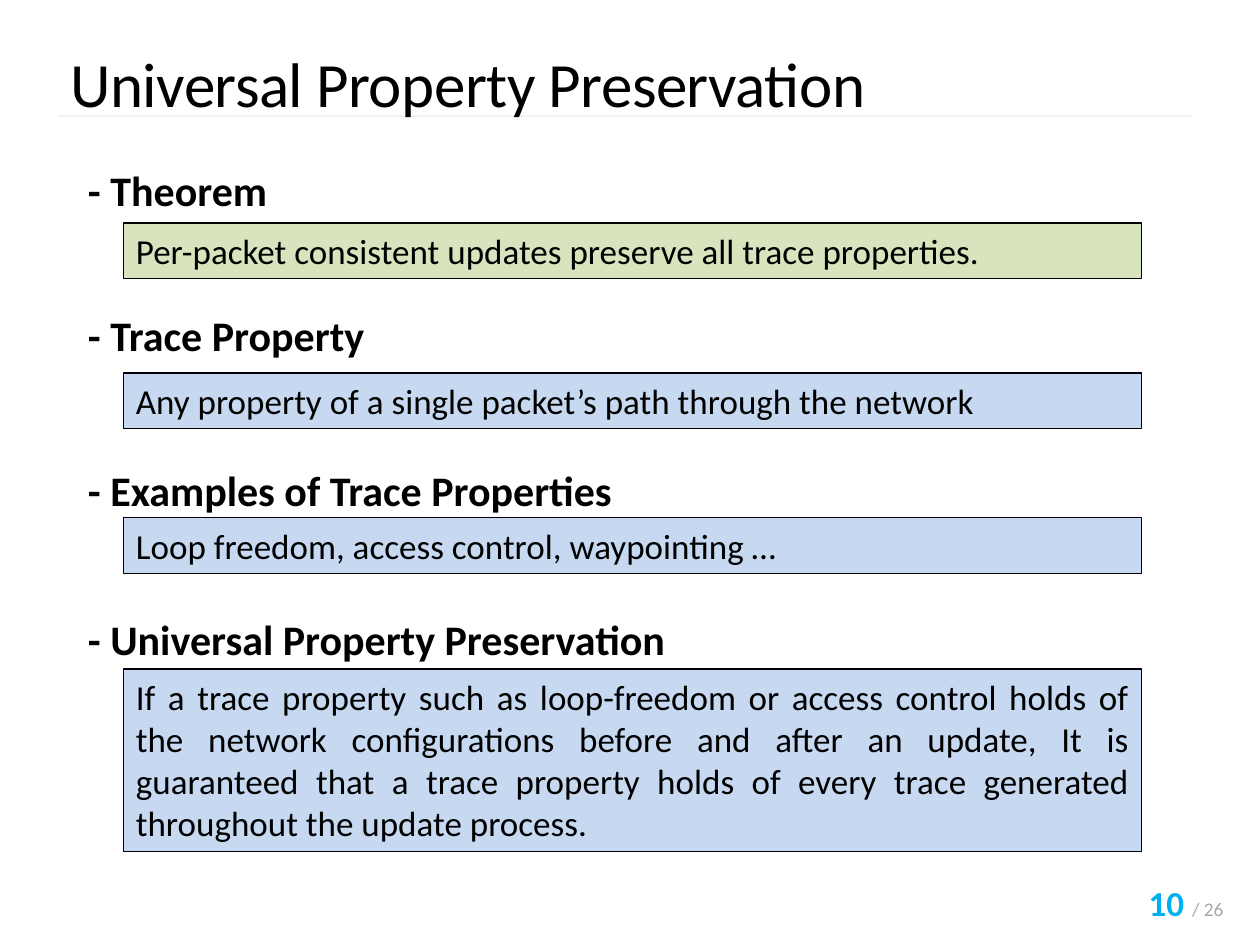
from lxml.etree import SubElement
from pptx import Presentation
from pptx.dml.color import RGBColor
from pptx.enum.shapes import MSO_CONNECTOR, MSO_SHAPE
from pptx.enum.text import MSO_ANCHOR, MSO_AUTO_SIZE, PP_ALIGN
from pptx.oxml.ns import qn
from pptx.util import Inches, Pt

BLACK = RGBColor(0x00, 0x00, 0x00)
GREEN = RGBColor(0xD7, 0xE4, 0xBD)
BLUE = RGBColor(0xC6, 0xD9, 0xF1)
RULE = RGBColor(0xF2, 0xF2, 0xF2)
CYAN = RGBColor(0x00, 0xB0, 0xF0)
GRAY = RGBColor(0xA6, 0xA6, 0xA6)

# Content
TITLE = "Universal Property Preservation"
PAGE, TOTAL = "10 ", "/ 26"
# heading, heading top, statement, box top, box height, fill, alignment
SECTIONS = [
    ("- Theorem", 1.26,
     "Per-packet consistent updates preserve all trace properties.",
     1.77, 0.44, GREEN, PP_ALIGN.LEFT),
    ("- Trace Property", 2.41,
     "Any property of a single packet’s path through the network",
     2.96, 0.44, BLUE, PP_ALIGN.LEFT),
    ("- Examples of Trace Properties", 3.64,
     "Loop freedom, access control, waypointing …",
     4.11, 0.44, BLUE, PP_ALIGN.LEFT),
    ("- Universal Property Preservation", 4.82,
     "If a trace property such as loop-freedom or access control holds of "
     "the network configurations before and after an update, It is "
     "guaranteed that a trace property holds of every trace generated "
     "throughout the update process.",
     5.31, 1.45, BLUE, PP_ALIGN.JUSTIFY),
]

# Text formats
TITLE_FONT = {"size": Pt(36), "bold": False}
HEADING_FONT = {"size": Pt(24), "bold": True}
BODY_FONT = {"size": Pt(20), "bold": False}
PAGE_FONT = {"size": Pt(20), "bold": True}
TOTAL_FONT = {"size": Pt(11), "bold": False}

# Layout
HEADING_X, BOX_X, BOX_W = 0.6, 0.98, 8.08
HEADING_W, HEADING_H = BOX_X + BOX_W - HEADING_X, 0.5


def add_run(p, text, font, color=BLACK):
    r = p.add_run()
    r.text = text
    r.font.name = "Calibri"
    r.font.color.rgb = color
    for name, value in font.items():
        setattr(r.font, name, value)
    return r


def set_frame(sp, align=PP_ALIGN.LEFT, anchor=MSO_ANCHOR.TOP):
    tf = sp.text_frame
    tf.word_wrap = True
    tf.auto_size = MSO_AUTO_SIZE.NONE
    tf.vertical_anchor = anchor
    p = tf.paragraphs[0]
    p.alignment = align
    return p


def add_text(s, x, y, w, h, align=PP_ALIGN.LEFT):
    sp = s.shapes.add_textbox(Inches(x), Inches(y), Inches(w), Inches(h))
    return set_frame(sp, align)


def add_box(s, y, h, fill, align):
    sp = s.shapes.add_shape(MSO_SHAPE.RECTANGLE, Inches(BOX_X), Inches(y),
                            Inches(BOX_W), Inches(h))
    sp.shadow.inherit = False
    sp.fill.solid()
    sp.fill.fore_color.rgb = fill
    sp.line.color.rgb = BLACK
    sp.line.width = Pt(0.75)
    return set_frame(sp, align)


def main():
    prs = Presentation()
    prs.slide_width, prs.slide_height = Inches(10), Inches(7.5)
    s = prs.slides.add_slide(prs.slide_layouts[5])

    # Rule under the title, placed behind it
    rule = s.shapes.add_connector(MSO_CONNECTOR.STRAIGHT, Inches(0.46),
                                  Inches(0.92), Inches(9.45), Inches(0.92))
    rule.line.color.rgb = RULE
    rule.line.width = Pt(1.5)
    SubElement(rule._element.spPr, qn("a:effectLst"))
    title = s.shapes.title
    title._element.addprevious(rule._element)

    # Title
    title.left, title.top = Inches(0.46), Inches(0.3)
    title.width, title.height = Inches(7.02), Inches(0.71)
    r = add_run(set_frame(title), TITLE, TITLE_FONT)
    r.font._element.set("spc", "-30")

    # Headings with their statements
    for heading, heading_y, statement, y, h, fill, align in SECTIONS:
        add_run(add_box(s, y, h, fill, align), statement, BODY_FONT)
        p = add_text(s, HEADING_X, heading_y, HEADING_W, HEADING_H)
        add_run(p, heading, HEADING_FONT)

    # Page number
    p = add_text(s, 7.48, 6.95, 2.33, 0.4, PP_ALIGN.RIGHT)
    add_run(p, PAGE, PAGE_FONT, CYAN)
    add_run(p, TOTAL, TOTAL_FONT, GRAY)

    prs.save("out.pptx")


if __name__ == "__main__":
    main()
